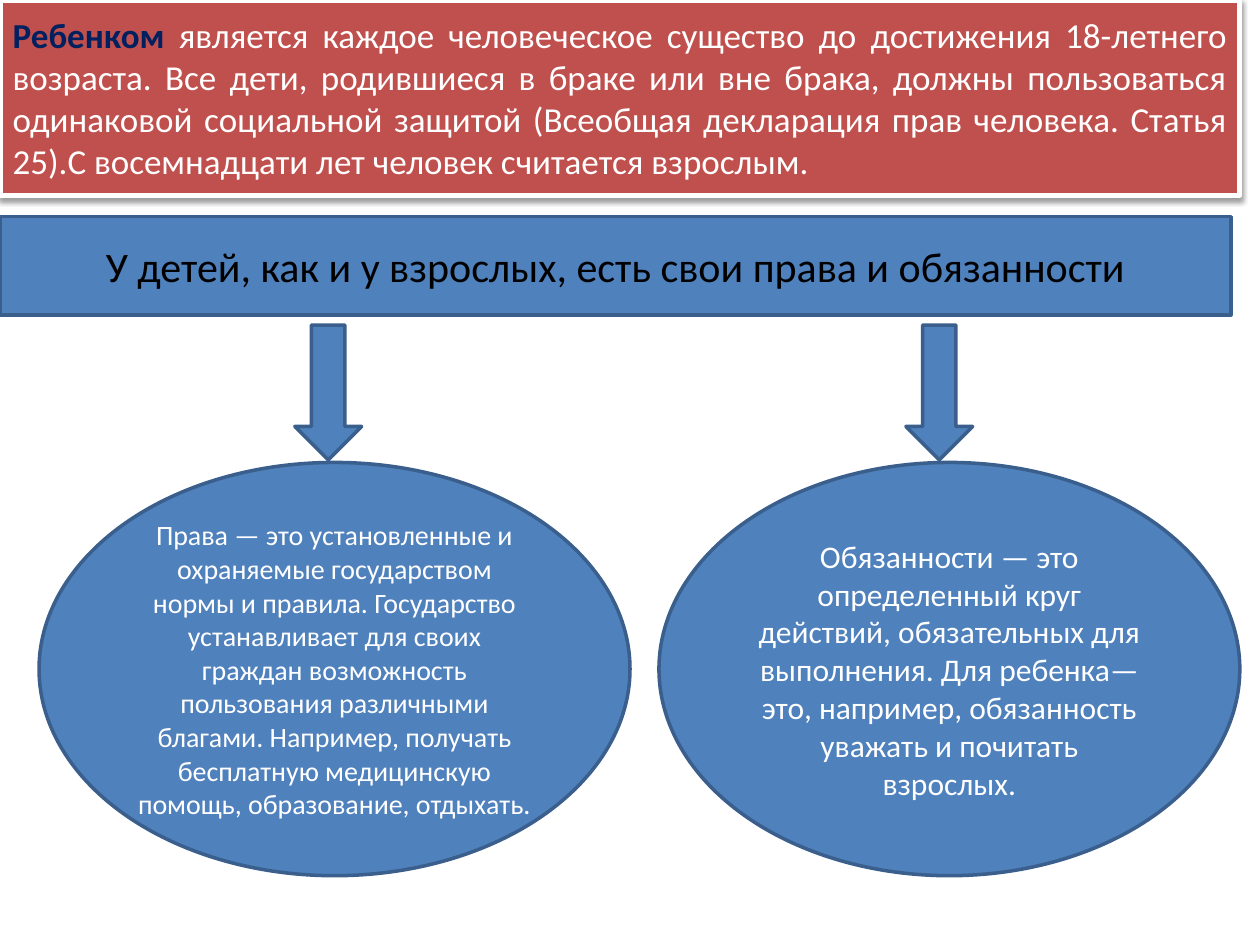
"""Build a slide that explains the rights and duties of children."""
from dataclasses import dataclass

from lxml.etree import SubElement
from pptx import Presentation
from pptx.dml.color import RGBColor as RGB
from pptx.enum.shapes import MSO_SHAPE as SHAPE
from pptx.enum.text import MSO_ANCHOR as ANCHOR, MSO_AUTO_SIZE as FIT, PP_ALIGN as ALIGN
from pptx.oxml.ns import qn
from pptx.util import Inches, Pt

COLS, ROWS = 100, 75
TITLE_ONLY = 5

DEFINITION = [
    ("Ребенком", True),
    (" является каждое человеческое существо до достижения 18-летнего возраста. "
     "Все дети, родившиеся в браке или вне брака, должны пользоваться одинаковой "
     "социальной защитой (Всеобщая декларация прав человека. Статья 25).С "
     "восемнадцати лет человек считается взрослым.", False),
]
STATEMENT = "У детей, как и у взрослых, есть свои права и обязанности"
RIGHTS = ("Права — это установленные и охраняемые государством нормы и правила. "
          "Государство устанавливает для своих граждан возможность пользования "
          "различными благами. Например, получать бесплатную медицинскую помощь, "
          "образование, отдыхать.")
DUTIES = ("Обязанности — это определенный круг действий, обязательных для "
          "выполнения. Для ребенка— это, например, обязанность уважать и почитать "
          "взрослых.")


@dataclass(frozen=True)
class Theme:
    font: str = "Calibri"
    red: RGB = RGB(0xC0, 0x50, 0x4D)
    blue: RGB = RGB(0x4F, 0x81, 0xBD)
    outline: RGB = RGB(0x3A, 0x5F, 0x8C)
    navy: RGB = RGB(0x00, 0x20, 0x60)
    white: RGB = RGB(0xFF, 0xFF, 0xFF)
    black: RGB = RGB(0x00, 0x00, 0x00)
    title: int = 20
    banner: int = 24
    rights: int = 16
    duties: int = 18


class Deck:
    def __init__(self, theme):
        self.theme = theme
        self.prs = Presentation()
        self.prs.slide_width, self.prs.slide_height = Inches(10), Inches(7.5)
        self.s = self.prs.slides.add_slide(self.prs.slide_layouts[TITLE_ONLY])

    def box(self, left, top, width, height):
        col, row = self.prs.slide_width / COLS, self.prs.slide_height / ROWS
        return int(left * col), int(top * row), int(width * col), int(height * row)

    def paint(self, sp, fill, line, weight):
        sp.fill.solid()
        sp.fill.fore_color.rgb = fill
        sp.line.color.rgb = line
        sp.line.width = Pt(weight)
        sp.shadow.inherit = False

    def format_text(self, sp, size, color, align):
        tf = sp.text_frame
        tf.word_wrap = True
        tf.auto_size = FIT.NONE
        tf.vertical_anchor = ANCHOR.MIDDLE
        p = tf.paragraphs[0]
        p.alignment = align
        p.font.name, p.font.size = self.theme.font, Pt(size)
        p.font.color.rgb = color
        return p

    def cast_shadow(self, sp):
        effects = sp._element.spPr.find(qn("a:effectLst"))
        shadow = SubElement(effects, qn("a:outerShdw"), blurRad=str(Pt(3.1)),
                            dist=str(Pt(1.6)), dir="5400000", rotWithShape="0")
        color = SubElement(shadow, qn("a:srgbClr"), val=str(self.theme.black))
        SubElement(color, qn("a:alpha"), val="38000")

    def title(self, box, runs):
        t = self.theme
        sp = self.s.shapes.title
        sp.left, sp.top, sp.width, sp.height = self.box(*box)
        self.paint(sp, t.red, t.white, 3)
        self.cast_shadow(sp)
        p = self.format_text(sp, t.title, t.white, ALIGN.JUSTIFY)
        for text, is_term in runs:
            r = p.add_run()
            r.text = text
            if is_term:
                r.font.bold = True
                r.font.color.rgb = t.navy

    def shape(self, kind, box):
        sp = self.s.shapes.add_shape(kind, *self.box(*box))
        self.paint(sp, self.theme.blue, self.theme.outline, 2)
        return sp

    def label(self, kind, box, text, size, color):
        sp = self.shape(kind, box)
        sp.text_frame.text = text
        self.format_text(sp, size, color, ALIGN.CENTER)

    def arrow(self, left):
        self.shape(SHAPE.DOWN_ARROW, (left, 25.8, 5.3, 10.7))


def main():
    t = Theme()
    deck = Deck(t)
    deck.title((0, 0, 98.4, 15.5), DEFINITION)
    deck.label(SHAPE.RECTANGLE, (0, 17.2, 97.7, 7.8), STATEMENT, t.banner, t.black)
    branches = [
        (23.4, 3.1, 46.9, RIGHTS, t.rights),
        (71.9, 52.3, 46.1, DUTIES, t.duties),
    ]
    for arrow_left, left, width, text, size in branches:
        deck.arrow(arrow_left)
        deck.label(SHAPE.OVAL, (left, 36.7, width, 32.8), text, size, t.white)
    deck.prs.save("out.pptx")


if __name__ == "__main__":
    main()
